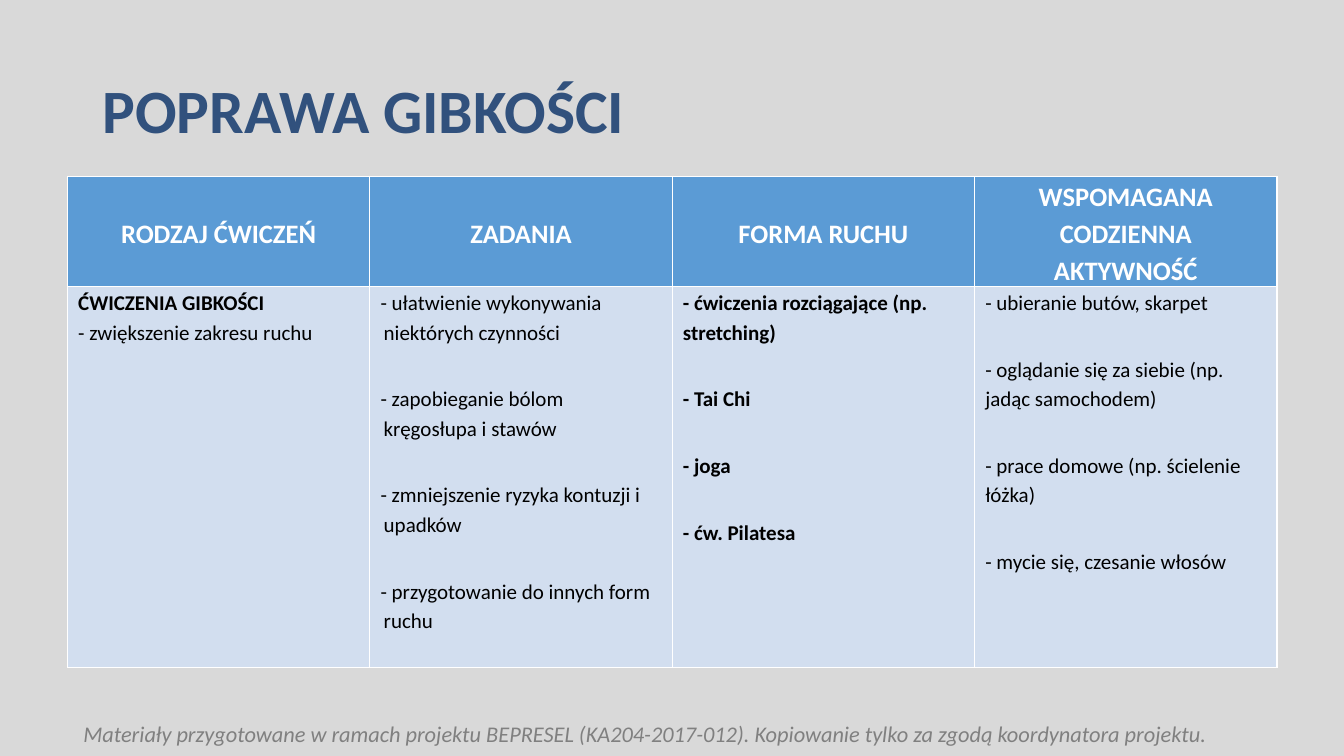
"""Slide on improving flexibility: a title, a table of exercises and a footer."""
from lxml.etree import SubElement as Sub
from pptx import Presentation
from pptx.dml.color import RGBColor as Rgb
from pptx.enum.text import MSO_ANCHOR as Anchor, PP_ALIGN as Align
from pptx.oxml.ns import qn
from pptx.util import Cm, Pt

HUES = {
    "back": "D9D9D9", "title": "31517D", "head": "5B9BD5", "body": "D2DEEF",
    "white": "FFFFFF", "black": "000000", "foot": "808080",
}
FONT = "Calibri"
HEADS = ["RODZAJ ĆWICZEŃ", "ZADANIA", "FORMA RUCHU",
         "WSPOMAGANA\nCODZIENNA\nAKTYWNOŚĆ"]
BODIES = [
    ["ĆWICZENIA GIBKOŚCI", "- zwiększenie zakresu ruchu"],
    ["- ułatwienie wykonywania niektórych czynności",
     "- zapobieganie bólom kręgosłupa i stawów",
     "- zmniejszenie ryzyka kontuzji i upadków",
     "- przygotowanie do innych form ruchu"],
    ["- ćwiczenia rozciągające (np. stretching)", "- Tai Chi", "- joga",
     "- ćw. Pilatesa"],
    ["- ubieranie butów, skarpet",
     "- oglądanie się za siebie (np. jadąc samochodem)",
     "- prace domowe (np. ścielenie łóżka)",
     "- mycie się, czesanie włosów"],
]
GAPS = [0, 26.5, 26.5, 26.5]
BOLDS = [1, 0, 4, 0]
NOTE = ("Materiały przygotowane w ramach projektu BEPRESEL (KA204-2017-012). "
        "Kopiowanie tylko za zgodą koordynatora projektu.")


def style(para, size, hue, bold=False, slant=False):
    """Format every run of a paragraph."""
    for run in para.runs:
        font = run.font
        font.name, font.size = FONT, Pt(size)
        font.bold, font.italic = bold, slant
        font.color.rgb = Rgb.from_string(HUES[hue])


def label(slide, box, text):
    """Add a wrapped text box and return its frame."""
    frame = slide.shapes.add_textbox(*map(Cm, box)).text_frame
    frame.word_wrap = True
    frame.text = text
    return frame


def title(slide, box):
    """Place the heading, centred vertically in its box."""
    frame = label(slide, box, "POPRAWA GIBKOŚCI")
    frame.vertical_anchor = Anchor.MIDDLE
    frame.paragraphs[0].line_spacing = 0.9
    style(frame.paragraphs[0], 44, "title", bold=True)


def footer(slide, box):
    """Place the copyright note."""
    frame = label(slide, box, NOTE)
    style(frame.paragraphs[0], 16, "foot", slant=True)


def paint(cell, hue):
    """Give a cell white borders, a fill and its margins."""
    props = cell._tc.get_or_add_tcPr()
    for side in ("lnL", "lnR", "lnT", "lnB"):
        line = Sub(props, qn("a:" + side), w=str(Pt(1)))
        fill = Sub(line, qn("a:solidFill"))
        Sub(fill, qn("a:srgbClr"), val=HUES["white"])
    cell.fill.solid()
    cell.fill.fore_color.rgb = Rgb.from_string(HUES[hue])
    cell.margin_left = cell.margin_right = Cm(0.27)
    cell.margin_top = cell.margin_bottom = 0


def head(cell, text):
    """Fill a heading cell."""
    paint(cell, "head")
    cell.vertical_anchor = Anchor.MIDDLE
    cell.text_frame.text = text
    for para in cell.text_frame.paragraphs:
        para.alignment, para.line_spacing = Align.CENTER, 1.15
        style(para, 19, "white", bold=True)


def body(cell, lines, gap, bolds, hang):
    """Fill a cell with spaced lines, the first few of them bold."""
    paint(cell, "body")
    cell.text_frame.text = "\n".join(lines)
    for row, para in enumerate(cell.text_frame.paragraphs):
        para.line_spacing = 1.15
        para.space_before = Pt(gap if row else 0)
        if hang:
            props = para._p.get_or_add_pPr()
            props.set("marL", str(Cm(hang)))
            props.set("indent", str(-Cm(hang)))
        style(para, 15, "black", bold=row < bolds)


def table(slide, box):
    """Place the table with equal columns and a heading row."""
    count, top = len(HEADS), 2.72
    grid = slide.shapes.add_table(2, count, *map(Cm, box)).table
    grid.first_row = grid.horz_banding = False
    grid.rows[0].height, grid.rows[1].height = Cm(top), Cm(box[3] - top)
    for col in range(count):
        grid.columns[col].width = Cm(box[2] / count)
        head(grid.cell(0, col), HEADS[col])
        body(grid.cell(1, col), BODIES[col], GAPS[col], BOLDS[col],
             0.08 if col == 1 else 0)


def main():
    """Build and save the slide."""
    deck = Presentation()
    deck.slide_width, deck.slide_height = Cm(33.87), Cm(19.05)
    slide = deck.slides.add_slide(deck.slide_layouts[6])
    back = slide.background.fill
    back.solid()
    back.fore_color.rgb = Rgb.from_string(HUES["back"])
    title(slide, (2.33, 1.01, 29.21, 3.68))
    table(slide, (1.7, 4.45, 30.48, 12.32))
    footer(slide, (1.85, 18.03, 31.75, 0.94))
    deck.save("out.pptx")


if __name__ == "__main__":
    main()
